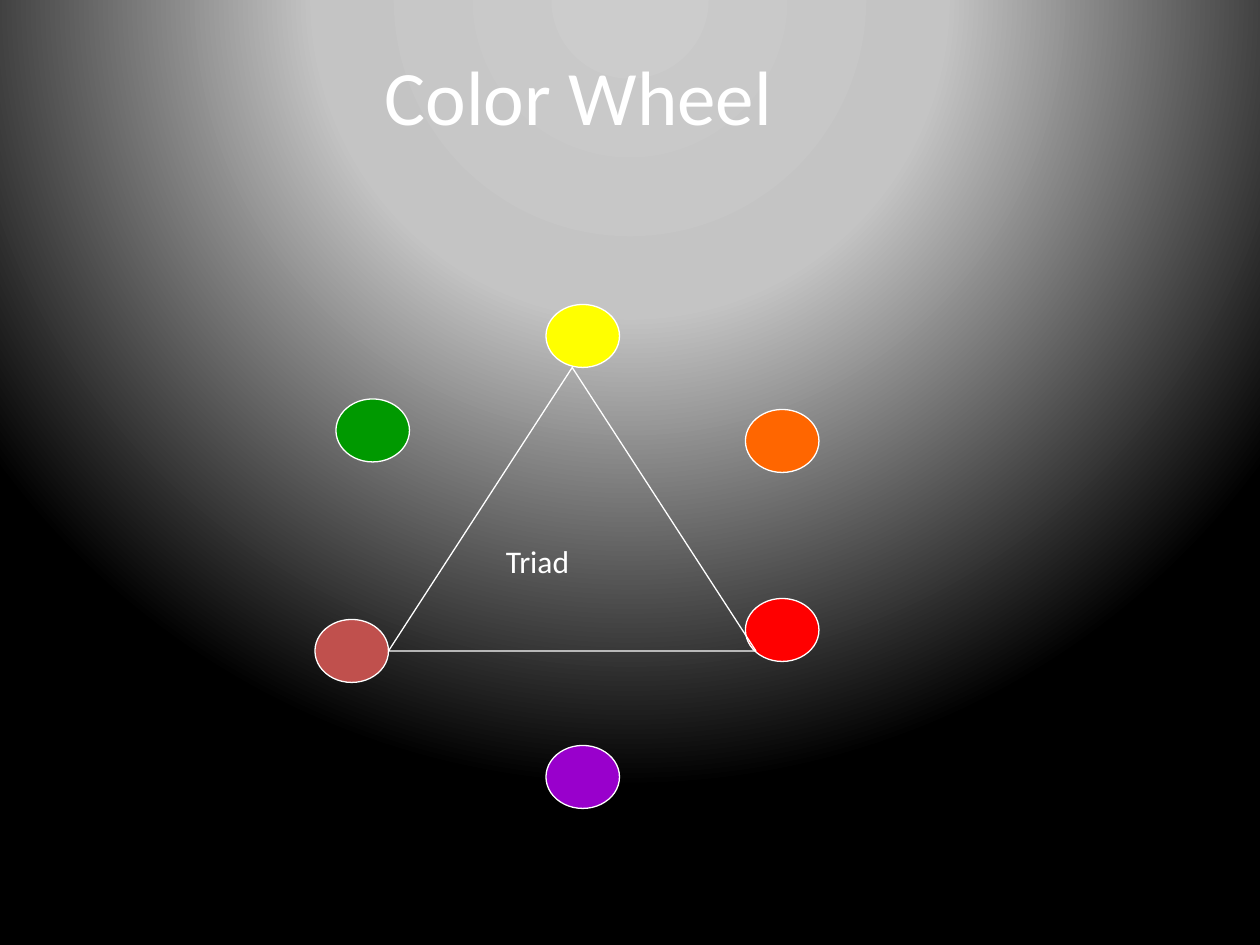
from lxml import etree
from pptx import Presentation
from pptx.dml.color import RGBColor
from pptx.enum.shapes import MSO_SHAPE as Preset
from pptx.enum.text import MSO_ANCHOR as Anchor, PP_ALIGN as Align
from pptx.oxml.ns import qn
from pptx.util import Inches, Pt

COLORS = {
    "white": "FFFFFF", "orange": "FF6600", "purple": "9900CC", "red": "FF0000",
    "brick": "C0504D", "green": "009900", "yellow": "FFFF00",
    "silver": "CCCCCC", "gray": "C4C4C4", "black": "000000",
}
WIDTH, HEIGHT = 10, 7.5
COLUMNS, ROWS = 120, 90
DOT_SIZE = (7, 6)
DOTS = [
    ("orange", 71, 39),
    ("purple", 52, 71),
    ("red", 71, 57),
    ("brick", 30, 59),
    ("green", 32, 38),
    ("yellow", 52, 29),
]
TRIAD = (37, 35, 35, 27)
LABELS = [
    ("Color Wheel", (2.5, 3, 105.2, 12), 44, Align.CENTER, Anchor.MIDDLE),
    ("Triad", (47, 51, 16, 4.8), 18, Align.LEFT, Anchor.TOP),
]
BACKDROP_STOPS = [(0, "silver"), (40, "gray"), (100, "black")]
BACKDROP_CENTER = {"l": 50, "t": -80, "r": 50, "b": 180}


def color(name):
    return RGBColor.from_string(COLORS[name])


def cells(left, top, width, height):
    column, row = WIDTH / COLUMNS, HEIGHT / ROWS
    return [Inches(count * unit) for count, unit in
            zip((left, top, width, height), (column, row, column, row))]


def apply(target, formats):
    for name, value in formats.items():
        setattr(target, name, value)


def paint_backdrop(slide):
    slide.background.fill.gradient()
    gradient = next(slide.element.iter(qn("a:gradFill")))
    for child in list(gradient):
        gradient.remove(child)
    stops = etree.SubElement(gradient, qn("a:gsLst"))
    for percent, name in BACKDROP_STOPS:
        stop = etree.SubElement(stops, qn("a:gs"), pos=str(percent * 1000))
        etree.SubElement(stop, qn("a:srgbClr"), val=COLORS[name])
    shade = etree.SubElement(gradient, qn("a:path"), {"path": "circle"})
    center = {side: str(share * 1000) for side, share in BACKDROP_CENTER.items()}
    etree.SubElement(shade, qn("a:fillToRect"), center)


def add_outline(slide, preset, box, fill=None):
    shape = slide.shapes.add_shape(preset, *cells(*box))
    shape.shadow.inherit = False
    if fill:
        shape.fill.solid()
        shape.fill.fore_color.rgb = color(fill)
    else:
        shape.fill.background()
    shape.line.color.rgb = color("white")
    shape.line.width = Pt(0.75)


def add_label(slide, text, box, size, align, anchor):
    frame = slide.shapes.add_textbox(*cells(*box)).text_frame
    apply(frame, {"word_wrap": True, "vertical_anchor": anchor})
    paragraph = frame.paragraphs[0]
    paragraph.alignment = align
    run = paragraph.add_run()
    run.text = text
    apply(run.font, {"name": "Calibri", "size": Pt(size)})
    run.font.color.rgb = color("white")


def main():
    presentation = Presentation()
    apply(presentation, {"slide_width": Inches(WIDTH), "slide_height": Inches(HEIGHT)})
    slide = presentation.slides.add_slide(presentation.slide_layouts[6])
    paint_backdrop(slide)
    title, triad_label = LABELS
    add_label(slide, *title)
    for name, left, top in DOTS:
        add_outline(slide, Preset.OVAL, (left, top, *DOT_SIZE), name)
    add_outline(slide, Preset.ISOSCELES_TRIANGLE, TRIAD)
    add_label(slide, *triad_label)
    presentation.save("out.pptx")


if __name__ == "__main__":
    main()
